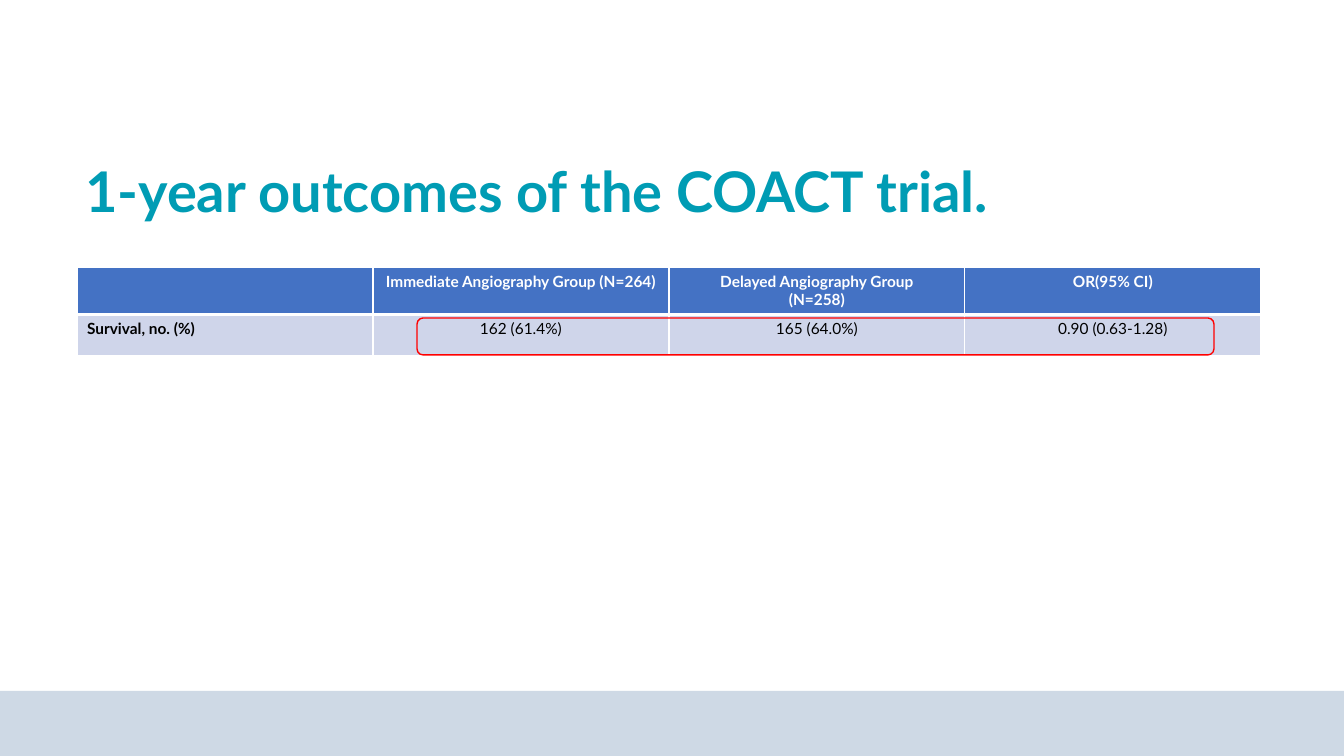
from lxml import etree
from pptx import Presentation
from pptx.dml.color import RGBColor
from pptx.enum.shapes import MSO_SHAPE
from pptx.enum.text import MSO_ANCHOR, PP_ALIGN
from pptx.oxml.ns import qn
from pptx.util import Pt

TITLE = "1-year outcomes of the COACT trial."
ROWS = [
    ["", "Immediate Angiography Group (N=264)", "Delayed Angiography Group\n(N=258)", "OR(95% CI)"],
    ["Survival, no. (%)", "162 (61.4%)", "165 (64.0%)", "0.90 (0.63-1.28)"],
]
COLORS = {
    "title": "009CB4",
    "header": "4472C4",
    "body": "CFD5EA",
    "footer": "CED9E5",
    "highlight": "FF0000",
    "white": "FFFFFF",
    "black": "000000",
}
FONT = "Lato"
SLIDE_SIZE = (1344, 756)
TITLE_BOX = (75, 121, 1186, 146)
TABLE_LEFT, TABLE_TOP, COLUMN_WIDTH = 77, 267, 296
ROW_HEIGHTS = [47, 41]
HIGHLIGHT_BOX = (417, 318, 797, 37)
FOOTER_TOP = 691

LEFT, CENTER = PP_ALIGN.LEFT, PP_ALIGN.CENTER
RECTANGLE, ROUNDED = MSO_SHAPE.RECTANGLE, MSO_SHAPE.ROUNDED_RECTANGLE


def px(value):
    return round(value * 914400 / 100.8)


def color(name):
    return RGBColor.from_string(COLORS[name])


def set_font(paragraph, size, name, bold):
    paragraph.font.name = FONT
    paragraph.font.size = Pt(size)
    paragraph.font.bold = bold
    paragraph.font.color.rgb = color(name)


def add_block(page, kind, box):
    block = page.shapes.add_shape(kind, *map(px, box))
    block.shadow.inherit = False
    block.fill.background()
    block.line.fill.background()
    return block


def set_borders(cell, widths):
    properties = cell._tc.get_or_add_tcPr()
    for index, (side, width) in enumerate(widths.items()):
        line = etree.Element(qn(f"a:ln{side}"), w=str(Pt(width)))
        fill = etree.SubElement(line, qn("a:solidFill"))
        etree.SubElement(fill, qn("a:srgbClr"), val=COLORS["white"])
        properties.insert(index, line)


def add_title(page):
    title = page.shapes.title
    title.left, title.top, title.width, title.height = map(px, TITLE_BOX)
    title.text_frame.text = TITLE
    title.text_frame.vertical_anchor = MSO_ANCHOR.MIDDLE
    paragraph = title.text_frame.paragraphs[0]
    paragraph.alignment = LEFT
    paragraph.line_spacing = 0.9
    set_font(paragraph, 40, "title", True)


def add_outcomes(page):
    columns = len(ROWS[0])
    box = (TABLE_LEFT, TABLE_TOP, COLUMN_WIDTH * columns, sum(ROW_HEIGHTS))
    table = page.shapes.add_table(len(ROWS), columns, *map(px, box)).table
    for column in table.columns:
        column.width = px(COLUMN_WIDTH)
    for r, texts in enumerate(ROWS):
        table.rows[r].height = px(ROW_HEIGHTS[r])
        header = r == 0
        for c, text in enumerate(texts):
            cell = table.cell(r, c)
            cell.text = text
            cell.fill.solid()
            cell.fill.fore_color.rgb = color("header" if header else "body")
            set_borders(cell, {"L": 1, "R": 1, "T": 1 if header else 3, "B": 3 if header else 1})
            for paragraph in cell.text_frame.paragraphs:
                paragraph.alignment = CENTER if c else LEFT
                set_font(paragraph, 11, "white" if header else "black", header or c == 0)


def main():
    deck = Presentation()
    deck.slide_width, deck.slide_height = map(px, SLIDE_SIZE)
    page = deck.slides.add_slide(deck.slide_layouts[5])
    width, height = SLIDE_SIZE
    footer = add_block(page, RECTANGLE, (0, FOOTER_TOP, width, height - FOOTER_TOP))
    footer.fill.solid()
    footer.fill.fore_color.rgb = color("footer")
    add_title(page)
    add_outcomes(page)
    highlight = add_block(page, ROUNDED, HIGHLIGHT_BOX)
    highlight.line.color.rgb = color("highlight")
    highlight.line.width = Pt(1)
    deck.save("out.pptx")


if __name__ == "__main__":
    main()
